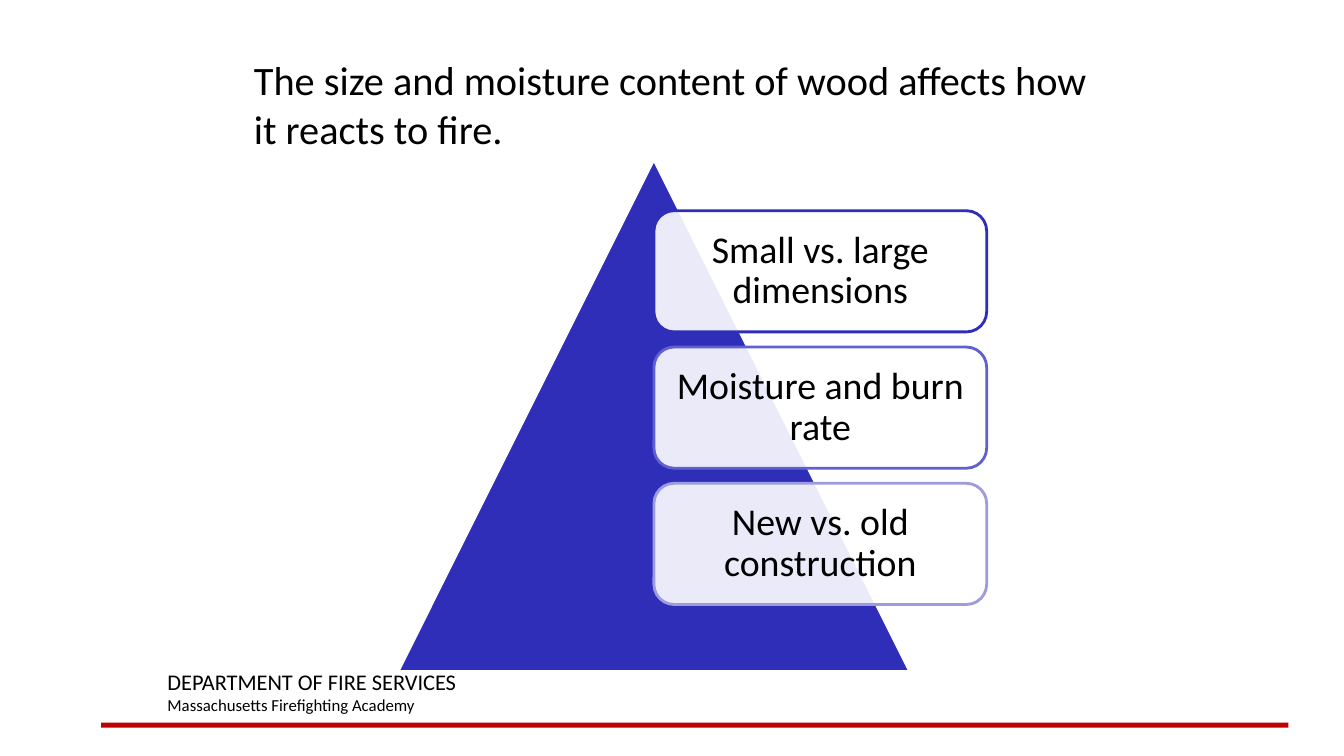
from lxml.etree import SubElement
from pptx import Presentation
from pptx.dml.color import RGBColor
from pptx.enum.shapes import MSO_SHAPE
from pptx.enum.text import MSO_ANCHOR, PP_ALIGN
from pptx.oxml.ns import qn
from pptx.util import Cm, Pt

FONT = "Calibri"
BLACK = RGBColor(0x00, 0x00, 0x00)
WHITE = RGBColor(0xFF, 0xFF, 0xFF)
RED = RGBColor(0xC0, 0x00, 0x00)
BLUE = RGBColor(0x2E, 0x2E, 0xB9)
MID_BLUE = RGBColor(0x60, 0x60, 0xD0)
PALE_BLUE = RGBColor(0x9C, 0x9C, 0xDD)

FACTORS = [
    ("Small vs. large dimensions", BLUE),
    ("Moisture and burn rate", MID_BLUE),
    ("New vs. old construction", PALE_BLUE),
]


def add_run(paragraph, text, size):
    run = paragraph.add_run()
    run.text = text
    run.font.name = FONT
    run.font.size = Pt(size)
    run.font.color.rgb = BLACK


def add_filled_shape(slide, preset, box, fill, line=None):
    shape = slide.shapes.add_shape(preset, *map(Cm, box))
    shape.shadow.inherit = False
    shape.fill.solid()
    shape.fill.fore_color.rgb = fill
    if line is None:
        shape.line.fill.background()
    else:
        shape.line.color.rgb = line
        shape.line.width = Pt(2)
    return shape


def set_opacity(shape, percent):
    color = shape.fill._xPr.find(qn("a:solidFill"))[0]
    SubElement(color, qn("a:alpha"), val=str(percent * 1000))


def add_text_lines(slide, box, lines):
    frame = slide.shapes.add_textbox(*map(Cm, box)).text_frame
    frame.word_wrap = True
    for index, (text, size) in enumerate(lines):
        paragraph = frame.add_paragraph() if index else frame.paragraphs[0]
        add_run(paragraph, text, size)


def add_factor_card(slide, box, text, outline):
    card = add_filled_shape(slide, MSO_SHAPE.ROUNDED_RECTANGLE, box, WHITE, outline)
    set_opacity(card, 90)
    frame = card.text_frame
    frame.word_wrap = True
    frame.vertical_anchor = MSO_ANCHOR.MIDDLE
    frame.margin_left = frame.margin_right = Cm(0.42)
    frame.margin_top = frame.margin_bottom = Cm(0.42)
    paragraph = frame.paragraphs[0]
    paragraph.alignment = PP_ALIGN.CENTER
    paragraph.line_spacing = 0.9
    add_run(paragraph, text, 27)


def add_factor_pyramid(slide, left, top, side):
    add_filled_shape(slide, MSO_SHAPE.ISOSCELES_TRIANGLE, (left, top, side, side), BLUE, WHITE)
    card_width = side * 0.65
    card_height = side * 0.71 / 3
    pitch = card_height * 1.125
    for index, (text, outline) in enumerate(FACTORS):
        card_top = top + side * 0.1 + index * pitch
        box = (left + side / 2, card_top, card_width, card_height)
        add_factor_card(slide, box, text, outline)


def add_footer(slide, left, top, width):
    add_filled_shape(slide, MSO_SHAPE.RECTANGLE, (left, top + 1.5, width, 0.13), RED)
    lines = [("DEPARTMENT OF FIRE SERVICES", 16), ("Massachusetts Firefighting Academy", 12)]
    add_text_lines(slide, (left + 1.42, top, 14.4, 1.45), lines)


def main():
    presentation = Presentation()
    presentation.slide_width = Cm(33.87)
    presentation.slide_height = Cm(19.05)
    slide = presentation.slides.add_slide(presentation.slide_layouts[6])
    add_footer(slide, 2.55, 16.71, 29.92)
    title = "The size and moisture content of wood affects how it reacts to fire."
    add_text_lines(slide, (6.15, 1.27, 21.59, 2.54), [(title, 28.8)])
    add_factor_pyramid(slide, 10.03, 4.02, 12.9)
    presentation.save("out.pptx")


if __name__ == "__main__":
    main()
